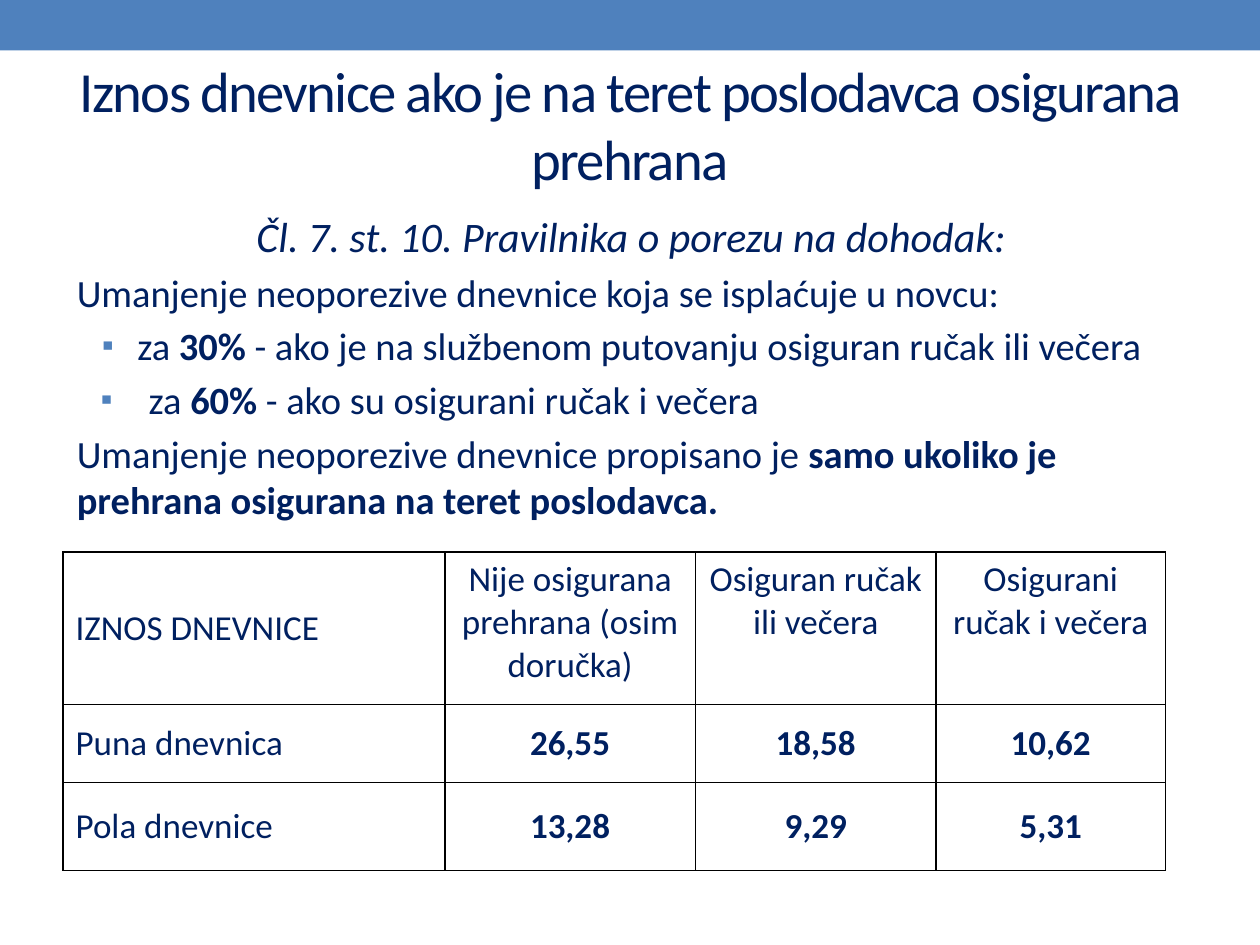
from pptx import Presentation
from pptx.dml.color import RGBColor as RGB
from pptx.enum.shapes import MSO_SHAPE as Shape
from pptx.enum.text import MSO_ANCHOR as Anchor, MSO_AUTO_SIZE as Fit, PP_ALIGN as Align
from pptx.oxml import parse_xml
from pptx.oxml.ns import nsdecls
from pptx.util import Inches, Pt

NAVY = RGB(0x00, 0x20, 0x60)
BLUE = RGB(0x4F, 0x81, 0xBD)
BLACK = RGB(0, 0, 0)

TITLE = "Iznos dnevnice ako je na teret poslodavca osigurana prehrana"
LEAD = "Čl. 7. st. 10. Pravilnika o porezu na dohodak:"
# Each paragraph: left margin and first-line indent, then (text, bold) runs.
BODY = [
    (0, 0, [("Umanjenje neoporezive dnevnice koja se isplaćuje u novcu:", False)]),
    (0.48, -0.28, [("za ", False), ("30% ", True),
                   ("- ako je na službenom putovanju osiguran ručak ili večera", False)]),
    (0.57, -0.38, [("za ", False), ("60% ", True),
                   ("- ako su osigurani ručak i večera", False)]),
    (0, 0, [("Umanjenje neoporezive dnevnice propisano je ", False),
            ("samo ukoliko je prehrana osigurana na teret poslodavca.", True)]),
]
ROWS = [
    ["IZNOS DNEVNICE", "Nije osigurana prehrana (osim doručka)",
     "Osiguran ručak ili večera", "Osigurani ručak i večera"],
    ["Puna dnevnica", "26,55", "18,58", "10,62"],
    ["Pola dnevnice", "13,28", "9,29", "5,31"],
]
WIDTHS = [3.03, 1.99, 1.91, 1.82]
HEIGHTS = [1.21, 0.62, 0.7]


class Deck:
    font = "Calibri"
    ink = NAVY

    def __init__(self):
        self.prs = Presentation()
        self.prs.slide_width, self.prs.slide_height = Inches(10), Inches(7.5)
        self.slide = self.prs.slides.add_slide(self.prs.slide_layouts[1])

    def style(self, run, size, bold=False, italic=False):
        font = run.font
        font.name, font.size = self.font, Pt(size)
        font.bold, font.italic = bold, italic
        font.color.rgb = self.ink

    def place(self, shape, x, y, w, h):
        shape.left, shape.top = Inches(x), Inches(y)
        shape.width, shape.height = Inches(w), Inches(h)
        shape.text_frame.auto_size = Fit.NONE
        return shape.text_frame

    def band(self, x, y, w, h):
        bar = self.slide.shapes.add_shape(
            Shape.RECTANGLE, Inches(x), Inches(y), Inches(w), Inches(h))
        bar.shadow.inherit = False
        bar.fill.solid()
        bar.fill.fore_color.rgb = BLUE
        bar.line.fill.background()

    def title(self, text):
        frame = self.place(self.slide.shapes.title, 0.5, 0.58, 9, 0.8)
        frame.vertical_anchor = Anchor.MIDDLE
        frame.text = text
        para = frame.paragraphs[0]
        para.alignment = Align.CENTER
        run = para.runs[0]
        self.style(run, 32.4)
        run.font._element.set("spc", "-100")

    def indent(self, para, left, first):
        """Set the margins, with a square bullet where the first line hangs."""
        props = para._p.get_or_add_pPr()
        props.set("marL", str(Inches(left)))
        props.set("indent", str(Inches(first)))
        marks = ["<a:buNone {}/>"]
        if first:
            marks = [f'<a:buClr {{}}><a:srgbClr val="{BLUE}"/></a:buClr>',
                     '<a:buSzPct {} val="85000"/>',
                     f'<a:buFont {{}} typeface="{self.font}"/>',
                     '<a:buChar {} char="▪"/>']
        for mark in marks:
            props.append(parse_xml(mark.format(nsdecls("a"))))

    def body(self, lead, items):
        frame = self.place(self.slide.placeholders[1], 0.51, 1.62, 9, 5.38)
        frame.text = lead
        head = frame.paragraphs[0]
        self.indent(head, 0, 0)
        head.alignment = Align.CENTER
        head.space_before = Pt(0)
        self.style(head.runs[0], 24, italic=True)
        for left, first, parts in items:
            para = frame.add_paragraph()
            self.indent(para, left, first)
            para.space_before = Pt(4.4)
            for text, bold in parts:
                run = para.add_run()
                run.text = text
                self.style(run, 22, bold)

    def border(self, cell):
        props = cell._tc.get_or_add_tcPr()
        for side in "LRTB":
            props.append(parse_xml(
                f'<a:ln{side} {nsdecls("a")} w="{Pt(1)}"><a:solidFill>'
                f'<a:srgbClr val="{BLACK}"/></a:solidFill></a:ln{side}>'))

    def table(self, x, y, rows, widths, heights):
        grid = self.slide.shapes.add_table(
            len(rows), len(widths), Inches(x), Inches(y),
            Inches(sum(widths)), Inches(sum(heights))).table
        grid.first_row = grid.horz_banding = False
        for col, width in zip(grid.columns, widths):
            col.width = Inches(width)
        for row, height in zip(grid.rows, heights):
            row.height = Inches(height)
        for r, texts in enumerate(rows):
            for c, text in enumerate(texts):
                cell = grid.cell(r, c)
                self.border(cell)
                cell.fill.background()
                head = r == 0 and c > 0
                cell.vertical_anchor = Anchor.TOP if head else Anchor.MIDDLE
                cell.text = text
                para = cell.text_frame.paragraphs[0]
                para.alignment = Align.CENTER if c else Align.LEFT
                self.style(para.runs[0], 20, bold=r > 0 and c > 0)


def main():
    deck = Deck()
    deck.band(0, 0, 10, 0.4)
    deck.title(TITLE)
    deck.body(LEAD, BODY)
    deck.table(0.5, 4.38, ROWS, WIDTHS, HEIGHTS)
    deck.prs.save("out.pptx")


if __name__ == "__main__":
    main()
